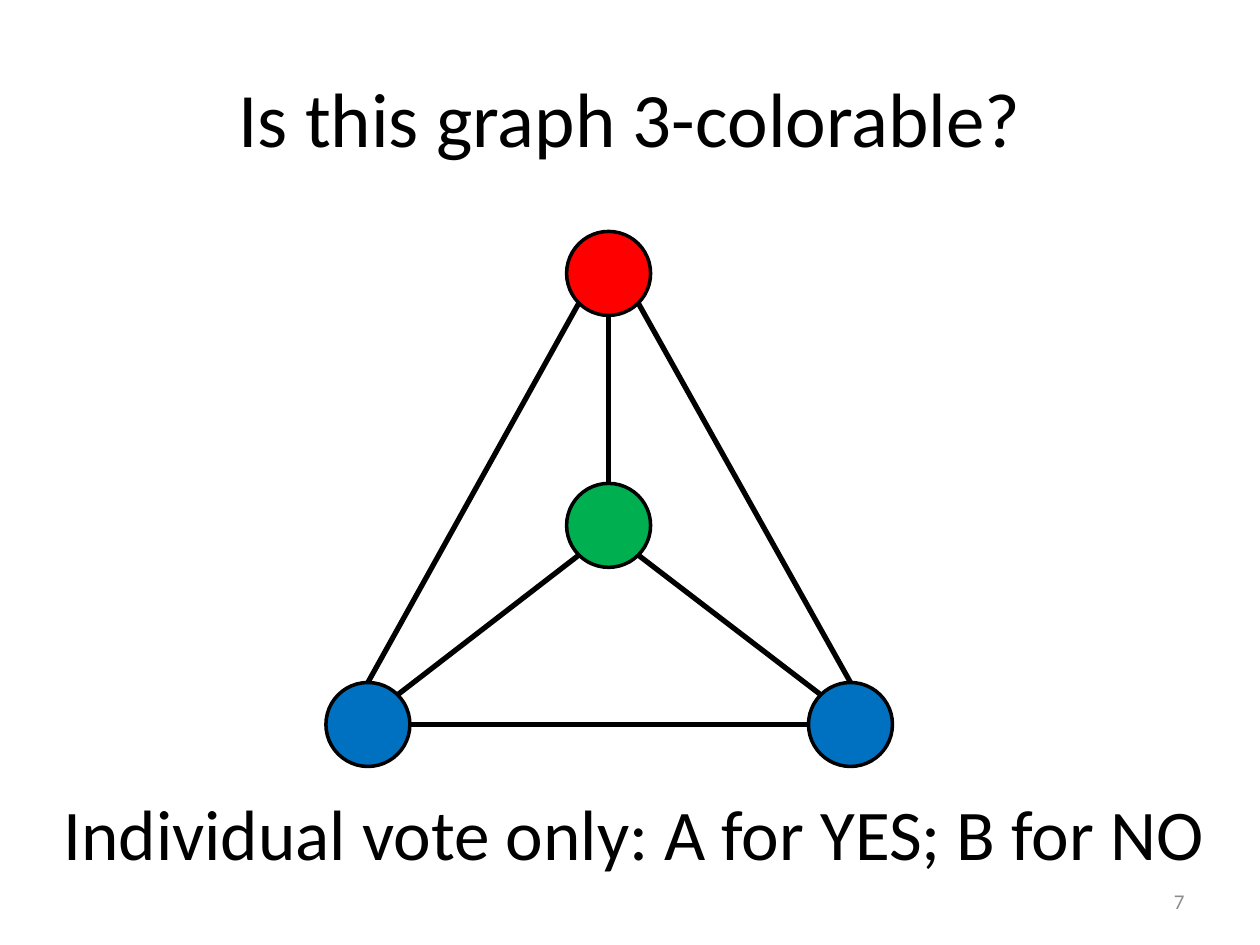
"""Build a slide that asks whether a four-node graph is 3-colorable."""
from dataclasses import dataclass
from math import cos, radians, sin

from lxml.etree import SubElement
from pptx import Presentation
from pptx.dml.color import RGBColor
from pptx.enum.shapes import MSO_CONNECTOR as Connector, MSO_SHAPE as Shape
from pptx.enum.text import MSO_ANCHOR as Anchor, MSO_AUTO_SIZE as AutoSize, PP_ALIGN as Align
from pptx.oxml.ns import qn
from pptx.util import Inches, Pt


@dataclass(frozen=True)
class Theme:
    font: str = "Calibri"
    ink: str = "000000"
    muted: str = "8C8C8C"
    red: str = "FF0000"
    green: str = "00B050"
    blue: str = "0070C0"
    title_size: float = 44
    caption_size: float = 40.7
    number_size: float = 12
    outline: float = 2
    edge: float = 3


THEME = Theme()
RADIUS = 1 / 3
NODES = {
    "top": (4.83, 2.17, THEME.red),
    "center": (4.83, 4.17, THEME.green),
    "left": (2.92, 5.75, THEME.blue),
    "right": (6.75, 5.75, THEME.blue),
}
ANGLES = {"E": 0, "SE": 45, "S": 90, "SW": 135, "W": 180, "NW": 225, "N": 270, "NE": 315}
EDGES = [
    ("top", "S", "center", "N"),
    ("center", "SE", "right", "NW"),
    ("left", "E", "right", "W"),
    ("top", "SW", "left", "N"),
    ("center", "SW", "left", "NE"),
    ("top", "SE", "right", "N"),
]


def color(value):
    return RGBColor.from_string(value)


def write(box, area, text, size, ink, align):
    box.left, box.top, box.width, box.height = map(Inches, area)
    frame = box.text_frame
    frame.text = text
    frame.word_wrap = True
    frame.auto_size = AutoSize.NONE
    frame.vertical_anchor = Anchor.MIDDLE
    para = frame.paragraphs[0]
    para.alignment = align
    font = para.runs[0].font
    font.name, font.size = THEME.font, Pt(size)
    font.color.rgb = color(ink)


def add_text(page, area, *style):
    write(page.shapes.add_textbox(*map(Inches, area)), area, *style)


def add_node(page, x, y, fill):
    size = Inches(2 * RADIUS)
    node = page.shapes.add_shape(Shape.OVAL, Inches(x - RADIUS), Inches(y - RADIUS), size, size)
    node.shadow.inherit = False
    node.fill.solid()
    node.fill.fore_color.rgb = color(fill)
    node.line.color.rgb = color(THEME.ink)
    node.line.width = Pt(THEME.outline)


def rim_point(name, side):
    x, y, _ = NODES[name]
    angle = radians(ANGLES[side])
    return Inches(x + RADIUS * cos(angle)), Inches(y + RADIUS * sin(angle))


def add_edge(page, start, start_side, end, end_side):
    edge = page.shapes.add_connector(
        Connector.STRAIGHT, *rim_point(start, start_side), *rim_point(end, end_side)
    )
    edge.line.color.rgb = color(THEME.ink)
    edge.line.width = Pt(THEME.edge)
    SubElement(edge._element.spPr, qn("a:effectLst"))


def main():
    deck = Presentation()
    deck.slide_width, deck.slide_height = Inches(10), Inches(7.5)
    page = deck.slides.add_slide(deck.slide_layouts[5])
    write(page.shapes.title, (0.5, 0.3, 9, 1.25), "Is this graph 3-colorable?",
          THEME.title_size, THEME.ink, Align.CENTER)
    add_text(page, (7.17, 6.95, 2.33, 0.4), "7", THEME.number_size, THEME.muted, Align.RIGHT)
    for node in NODES.values():
        add_node(page, *node)
    for edge in EDGES:
        add_edge(page, *edge)
    add_text(page, (0.26, 5.98, 9.54, 1.25), "Individual vote only: A for YES; B for NO",
             THEME.caption_size, THEME.ink, Align.CENTER)
    deck.save("out.pptx")


if __name__ == "__main__":
    main()
